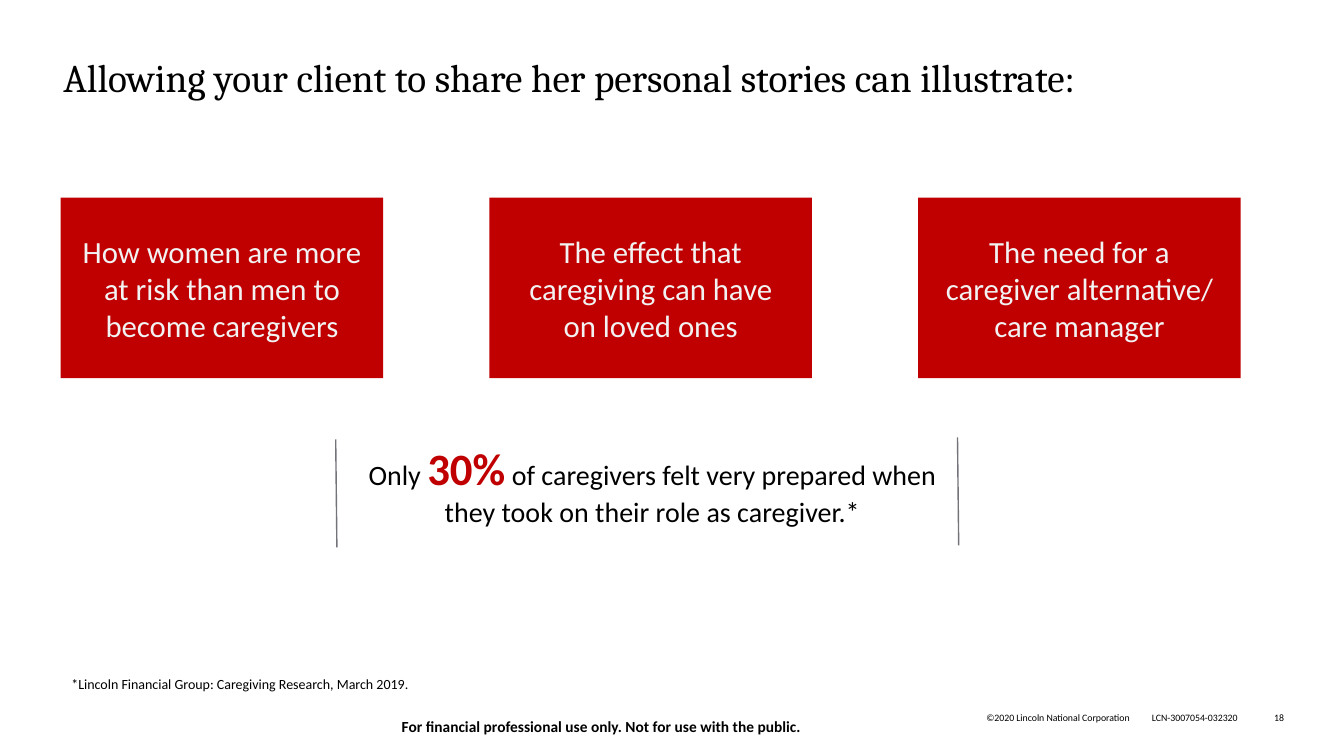
from pptx import Presentation
from pptx.dml.color import RGBColor
from pptx.enum import shapes, text
from pptx.oxml.ns import qn
from pptx.util import Cm, Pt

RED = RGBColor(0xC0, 0x00, 0x00)
OFF_WHITE = RGBColor(0xF2, 0xF2, 0xF2)
GREY = RGBColor(0x73, 0x73, 0x7A)
BLACK = RGBColor(0x00, 0x00, 0x00)

LEFT, CENTER, RIGHT = text.PP_ALIGN.LEFT, text.PP_ALIGN.CENTER, text.PP_ALIGN.RIGHT
TOP, MIDDLE, BOTTOM = text.MSO_ANCHOR.TOP, text.MSO_ANCHOR.MIDDLE, text.MSO_ANCHOR.BOTTOM


def write(sp, *runs, size, color=BLACK, bold=False, font="Calibri",
          align=LEFT, anchor=TOP, inset=Cm(0), after=Pt(0)):
    """Fill a shape with one paragraph; a run is a string or (string, overrides)."""
    tf = sp.text_frame
    tf.word_wrap = True
    tf.auto_size = text.MSO_AUTO_SIZE.NONE
    tf.vertical_anchor = anchor
    tf.margin_left = tf.margin_right = tf.margin_top = tf.margin_bottom = inset
    p = tf.paragraphs[0]
    p.alignment, p.space_after = align, after
    for run in runs:
        words, own = (run, {}) if isinstance(run, str) else run
        r = p.add_run()
        r.text = words
        r.font.name = font
        r.font.size = Pt(own.get("size", size))
        r.font.bold = own.get("bold", bold)
        r.font.color.rgb = own.get("color", color)


def add_label(slide, box, *runs, **fmt):
    """Add a text box in the given box."""
    write(slide.shapes.add_textbox(*box), *runs, **fmt)


def add_title(slide, box, words):
    """Place the title placeholder in the box."""
    sp = slide.shapes.title
    sp.left, sp.top, sp.width, sp.height = box
    write(sp, words, size=28, font="Cambria")


def add_cards(slide, box, messages, card_width):
    """Spread red message cards evenly over the box."""
    left, top, width, height = box
    pitch = (width - card_width) // (len(messages) - 1)
    for i, message in enumerate(messages):
        sp = slide.shapes.add_shape(shapes.MSO_SHAPE.RECTANGLE,
                                    left + i * pitch, top, card_width, height)
        sp.shadow.inherit = False
        sp.fill.solid()
        sp.fill.fore_color.rgb = RED
        sp.line.fill.background()
        write(sp, message, size=22, color=OFF_WHITE, align=CENTER,
              anchor=MIDDLE, inset=Cm(0.51), after=Pt(8))


def add_statistic(slide, box):
    """Set the key figure between two thin, slightly slanted rules."""
    left, top, width, height = box
    add_label(slide, (left + Cm(0.64), top + Cm(0.08), Cm(14.68), Cm(2.24)),
              "Only ", ("30%", dict(size=32, color=RED, bold=True)),
              " of caregivers felt very prepared when they took on their role as caregiver.*",
              size=20, align=CENTER)
    slant = Cm(0.03)
    for x, y in ((left, top + Cm(0.05)), (left + width - slant, top)):
        rule = slide.shapes.add_connector(shapes.MSO_CONNECTOR.STRAIGHT,
                                          x, y, x + slant, y + height)
        rule.line.color.rgb = GREY
        rule.line.width = Pt(1)
        props = rule._element.spPr
        props.append(props.makeelement(qn("a:effectLst"), {}))


def add_footer(slide, box):
    """Place the disclaimer, copyright, document code and page number."""
    left, top, width, height = box
    add_label(slide, (left, top + Cm(0.15), Cm(15.24), Cm(0.48)),
              "For financial professional use only. Not for use with the public.",
              size=11, bold=True, align=CENTER)
    for right, w, words in (
        (Cm(3.89), Cm(4.5), "©2020 Lincoln National Corporation"),
        (Cm(1.17), Cm(2.62), "LCN-3007054-032320"),
        (Cm(0), Cm(0.84), "18"),
    ):
        add_label(slide, (left + width - right - w, top, w, height), words,
                  size=7, align=RIGHT, anchor=BOTTOM)


def main():
    """Build the caregiver stories slide."""
    prs = Presentation()
    prs.slide_width, prs.slide_height = Cm(33.87), Cm(19.05)
    slide = prs.slides.add_slide(prs.slide_layouts[5])
    add_title(slide, (Cm(1.6), Cm(1.35), Cm(30.66), Cm(1.45)),
              "Allowing your client to share her personal stories can illustrate:")
    add_cards(slide, (Cm(1.53), Cm(4.98), Cm(29.74), Cm(4.55)),
              ("How women are more at risk than men to become caregivers",
               "The effect that caregiving can have on loved ones",
               "The need for a caregiver alternative/ care manager"), Cm(8.13))
    add_statistic(slide, (Cm(8.46), Cm(11.02), Cm(15.7), Cm(2.72)))
    add_label(slide, (Cm(1.8), Cm(17.02), Cm(21.97), Cm(0.86)),
              "*Lincoln Financial Group: Caregiving Research, March 2019.", size=10)
    add_footer(slide, (Cm(7.54), Cm(17.93), Cm(24.82), Cm(0.3)))
    prs.save("out.pptx")


if __name__ == "__main__":
    main()
